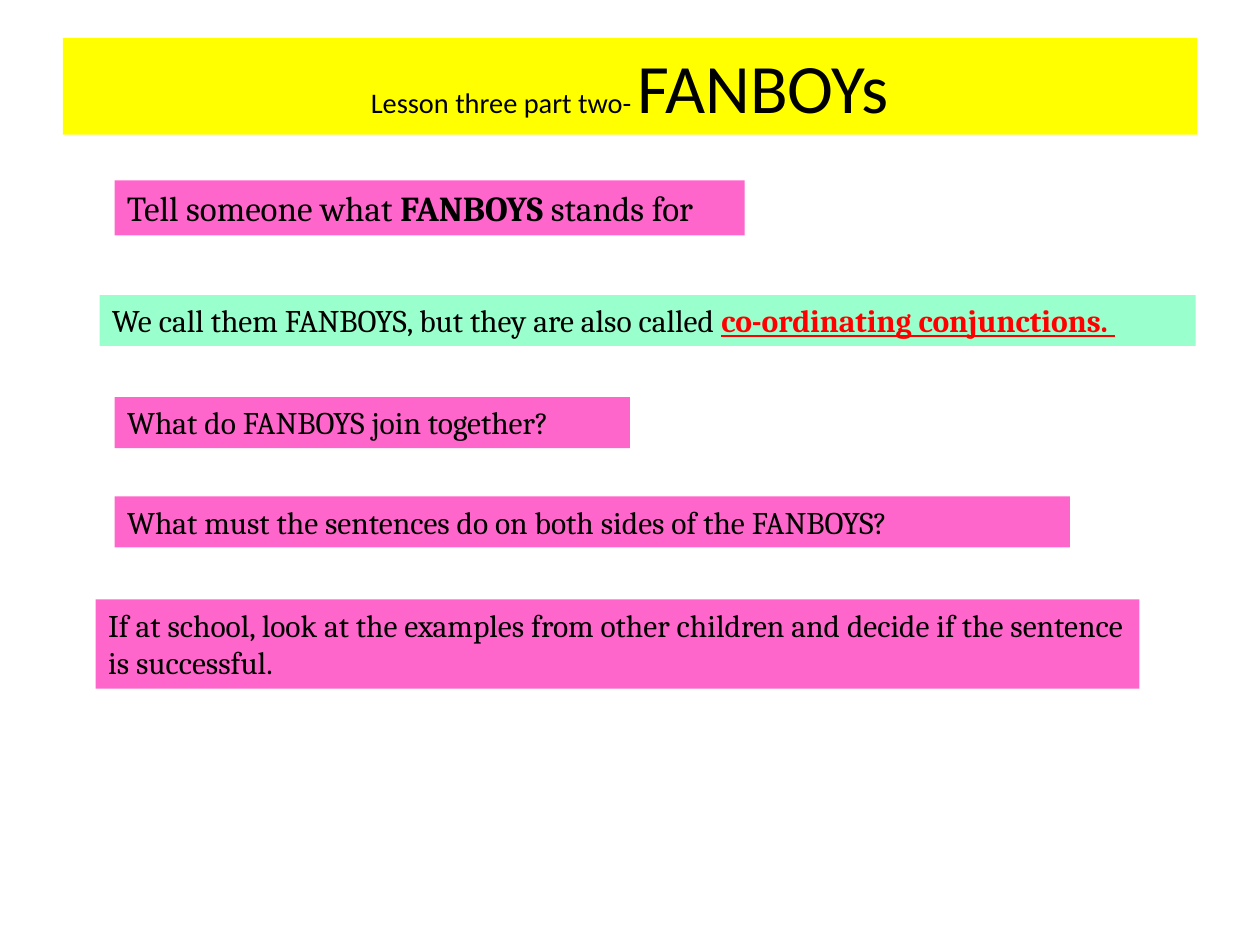
from dataclasses import dataclass, field

from pptx import Presentation
from pptx import util as u
from pptx.dml.color import RGBColor
from pptx.enum import text

PINK, MINT, YELLOW = "FF66CC", "99FFCC", "FFFF00"
BLACK, RED = "000000", "FF0000"


@dataclass
class Run:
    words: str
    size: float = 18
    color: str = BLACK
    format: dict = field(default_factory=dict)


@dataclass
class Banner:
    left: float
    top: float
    width: float
    height: float
    fill: str
    runs: list[Run]
    font: str = "Cambria"
    alignment: text.PP_ALIGN = text.PP_ALIGN.LEFT
    frame: dict = field(default_factory=dict)


def rgb(color: str) -> RGBColor:
    return RGBColor.from_string(color)


def set_attributes(target: object, values: dict) -> None:
    for name, value in values.items():
        setattr(target, name, value)


def draw_banner(slide, banner: Banner) -> None:
    box = (banner.left, banner.top, banner.width, banner.height)
    shape = slide.shapes.add_textbox(*map(u.Pt, box))
    shape.fill.solid()
    shape.fill.fore_color.rgb = rgb(banner.fill)
    frame = shape.text_frame
    set_attributes(frame, {"word_wrap": True, **banner.frame})
    paragraph = frame.paragraphs[0]
    paragraph.alignment = banner.alignment
    for item in banner.runs:
        run = paragraph.add_run()
        run.text = item.words
        set_attributes(run.font, {"name": banner.font, "size": u.Pt(item.size), **item.format})
        run.font.color.rgb = rgb(item.color)


BOLD = {"bold": True}
KEY_TERM = {"bold": True, "underline": True}

BANNERS = [
    Banner(36, 21.6, 720 - 2 * 36, 55.4, YELLOW,
           [Run("Lesson three part two- ", 16.2), Run("FANBOYs", 39.6)],
           "Calibri", text.PP_ALIGN.CENTER,
           {"vertical_anchor": text.MSO_ANCHOR.MIDDLE}),
    Banner(65.5, 103, 360, 31.5, PINK,
           [Run("Tell someone what ", 20), Run("FANBOYS", 20, format=BOLD),
            Run(" stands for", 20)]),
    Banner(56.9, 168.6, 626.4, 29.08, MINT,
           [Run("We call them FANBOYS, but they are also called "),
            Run("co-ordinating conjunctions.", color=RED, format=KEY_TERM),
            Run(" ", color=RED, format={"underline": True})]),
    Banner(65.5, 227, 294.5, 29.08, PINK, [Run("What do FANBOYS join together?")]),
    Banner(65.5, 283.7, 545.8, 29.08, PINK,
           [Run("What must the sentences do on both sides of the FANBOYS?")]),
    Banner(54.7, 342.6, 596.4, 50.9, PINK,
           [Run("If at school, look at the examples from other children "
                "and decide if the sentence is successful.")]),
]


def main() -> None:
    presentation = Presentation()
    set_attributes(presentation, {"slide_width": u.Pt(720), "slide_height": u.Pt(540)})
    slide = presentation.slides.add_slide(presentation.slide_layouts[6])
    for banner in BANNERS:
        draw_banner(slide, banner)
    presentation.save("out.pptx")


if __name__ == "__main__":
    main()
